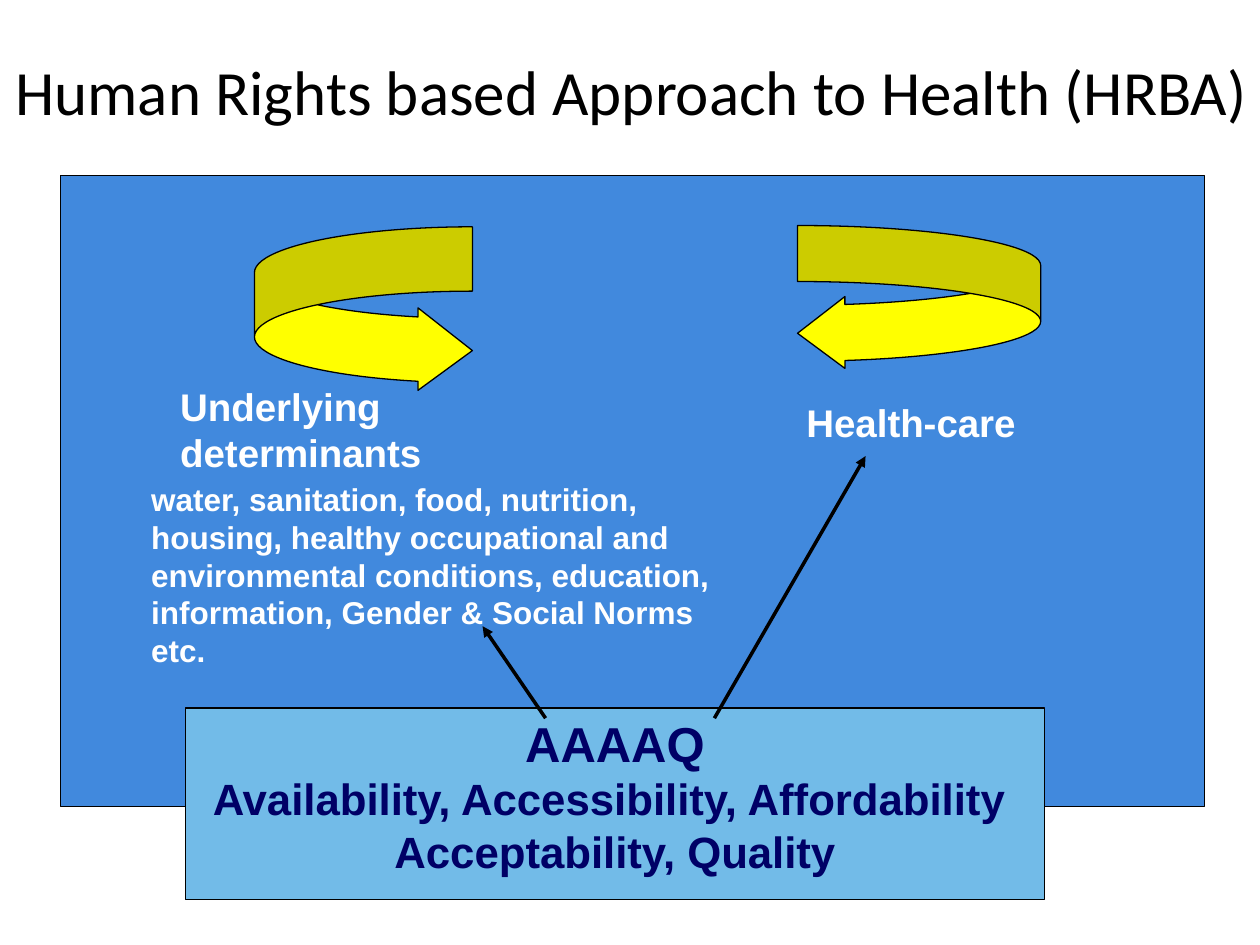
from lxml import etree
from pptx import Presentation
from pptx.dml.color import RGBColor
from pptx.enum.shapes import MSO_CONNECTOR, MSO_SHAPE
from pptx.enum.text import MSO_ANCHOR, PP_ALIGN
from pptx.oxml.ns import qn
from pptx.util import Inches, Pt

RECTANGLE = MSO_SHAPE.RECTANGLE
CURVED_ARROW = MSO_SHAPE.CURVED_LEFT_ARROW
STRAIGHT = MSO_CONNECTOR.STRAIGHT
TOP, MIDDLE = MSO_ANCHOR.TOP, MSO_ANCHOR.MIDDLE
LEFT, CENTER = PP_ALIGN.LEFT, PP_ALIGN.CENTER
TITLE_ONLY = 5

COLORS = {
    "black": "000000",
    "white": "FFFFFF",
    "panel": "4189DD",
    "box": "72BBE8",
    "arrow": "FFFF00",
    "navy": "000066",
}


def rgb(name):
    return RGBColor.from_string(COLORS[name])


def set_frame(frame, margins=(0.09, 0.04, 0.09, 0.04), anchor=TOP):
    left, top, right, bottom = map(Inches, margins)
    layout = {
        "word_wrap": True,
        "vertical_anchor": anchor,
        "margin_left": left,
        "margin_top": top,
        "margin_right": right,
        "margin_bottom": bottom,
    }
    for name, value in layout.items():
        setattr(frame, name, value)


def write(paragraph, text, size, color, align=LEFT, font="Arial", bold=True):
    paragraph.text = text
    paragraph.alignment = align
    for run in paragraph.runs:
        for name, value in {"name": font, "size": Pt(size), "bold": bold}.items():
            setattr(run.font, name, value)
        run.font.color.rgb = rgb(color)


def add_title(slide, text):
    title = slide.shapes.title
    bounds = {"left": 0.01, "top": 0.04, "width": 10, "height": 1.36}
    for name, value in bounds.items():
        setattr(title, name, Inches(value))
    set_frame(title.text_frame, (0, 0, 0, 0), MIDDLE)
    heading = title.text_frame.paragraphs[0]
    write(heading, text, 36, "black", CENTER, "Calibri", False)
    properties = heading.runs[0].font.fill._xPr
    effects = etree.Element(qn("a:effectLst"))
    shadow = etree.SubElement(
        effects, qn("a:outerShdw"), dist="25400", dir="2700000", algn="tl"
    )
    etree.SubElement(shadow, qn("a:srgbClr"), val=COLORS["box"])
    properties.find(qn("a:solidFill")).addnext(effects)


def add_block(shapes, kind, bounds, fill):
    block = shapes.add_shape(kind, *map(Inches, bounds))
    block.shadow.inherit = False
    block.fill.solid()
    block.fill.fore_color.rgb = rgb(fill)
    block.line.color.rgb = rgb("black")
    block.line.width = Pt(0.75)
    return block


def add_curved_arrow(shapes, bounds, flipped=False):
    arrow = add_block(shapes, CURVED_ARROW, bounds, "arrow")
    for index, value in enumerate((0.39, 0.78, 0.33)):
        arrow.adjustments[index] = value
    if flipped:
        arrow.element.spPr.find(qn("a:xfrm")).set("flipH", "1")


def add_label(shapes, bounds, text, size, margins=(0.09, 0.04, 0.09, 0.04)):
    frame = shapes.add_textbox(*map(Inches, bounds)).text_frame
    set_frame(frame, margins)
    write(frame.paragraphs[0], text, size, "white")


def add_pointer(shapes, start, end):
    pointer = shapes.add_connector(STRAIGHT, *map(Inches, start + end))
    pointer.line.color.rgb = rgb("black")
    pointer.line.width = Pt(2)
    etree.SubElement(pointer.line._get_or_add_ln(), qn("a:tailEnd"), type="triangle")
    etree.SubElement(pointer.element.spPr, qn("a:effectLst"))


def add_criteria(shapes):
    box = add_block(shapes, RECTANGLE, (1.47, 5.62, 6.82, 1.52), "box")
    frame = box.text_frame
    set_frame(frame)
    write(frame.paragraphs[0], "AAAAQ", 28, "navy", CENTER)
    criteria = "Availability, Accessibility, Affordability \vAcceptability, Quality"
    write(frame.add_paragraph(), criteria, 25, "navy", CENTER)


def main():
    presentation = Presentation()
    presentation.slide_width = Inches(10)
    presentation.slide_height = Inches(7.5)
    slide = presentation.slides.add_slide(presentation.slide_layouts[TITLE_ONLY])
    add_title(slide, "Human Rights based Approach to Health (HRBA)")

    diagram = slide.shapes.add_group_shape().shapes
    add_block(diagram, RECTANGLE, (0.48, 1.39, 9.08, 5.01), "panel")
    add_label(
        diagram,
        (1.11, 3.77, 4.79, 1.57),
        "water, sanitation, food, nutrition, housing, healthy occupational and "
        "environmental conditions, education, information, "
        "Gender & Social Norms etc.",
        18,
    )
    add_label(diagram, (1.34, 3, 3.7, 0.81), "Underlying determinants", 22)
    add_curved_arrow(diagram, (2.02, 1.8, 1.73, 1.31), flipped=True)
    add_label(
        diagram, (5.11, 2.95, 3.55, 0.62), "Health-care", 22, (1.29, 0.22, 0.09, 0.04)
    )
    add_curved_arrow(diagram, (6.33, 1.79, 1.93, 1.14))
    add_criteria(diagram)

    add_pointer(slide.shapes, (4.33, 5.7), (3.83, 4.97))
    add_pointer(slide.shapes, (5.67, 5.7), (6.87, 3.62))
    presentation.save("out.pptx")


if __name__ == "__main__":
    main()
